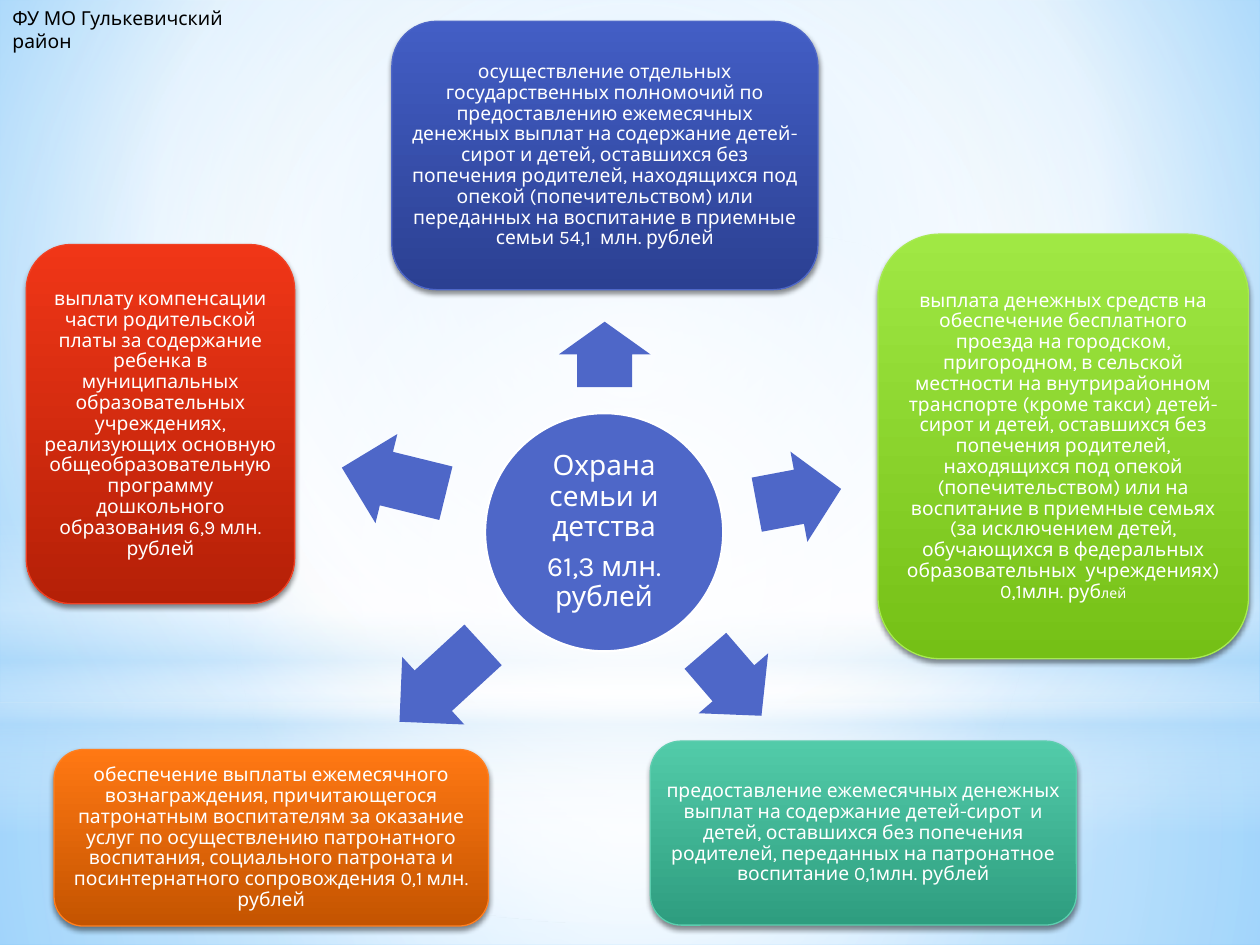
from lxml import etree
from pptx import Presentation
from pptx.dml.color import RGBColor
from pptx.enum.shapes import MSO_SHAPE
from pptx.enum.text import MSO_ANCHOR, PP_ALIGN
from pptx.oxml.ns import qn
from pptx.util import Cm, Pt

RECT, OVAL = MSO_SHAPE.RECTANGLE, MSO_SHAPE.OVAL
CARD, ARROW = MSO_SHAPE.ROUNDED_RECTANGLE, MSO_SHAPE.RIGHT_ARROW
CENTER, MIDDLE = PP_ALIGN.CENTER, MSO_ANCHOR.MIDDLE

WHITE = RGBColor(0xFF, 0xFF, 0xFF)
BLACK = RGBColor(0, 0, 0)
BLUE = RGBColor(0x4E, 0x67, 0xC8)
BLUE_TOP, BLUE_END = RGBColor(0x43, 0x5E, 0xC5), RGBColor(0x2B, 0x40, 0x92)
LIME = RGBColor(0xA7, 0xEA, 0x52)
LIME_TOP, LIME_END = RGBColor(0xA0, 0xE8, 0x44), RGBColor(0x75, 0xC0, 0x16)
TEAL = RGBColor(0x5D, 0xCE, 0xAF)
TEAL_TOP, TEAL_END = RGBColor(0x52, 0xCB, 0xA9), RGBColor(0x2E, 0x9D, 0x7F)
ORANGE = RGBColor(0xFF, 0x80, 0x21)
ORANGE_TOP, ORANGE_END = RGBColor(0xFF, 0x78, 0x13), RGBColor(0xC4, 0x54, 0x00)
RED = RGBColor(0xF1, 0x41, 0x24)
RED_TOP, RED_END = RGBColor(0xF0, 0x36, 0x17), RGBColor(0xB5, 0x20, 0x07)
SKY = RGBColor(0xB4, 0xDC, 0xFA)
SKY_IN, SKY_OUT = RGBColor(0x9E, 0xD5, 0xFF), RGBColor(0x5B, 0xB9, 0xFF)
MID = (50, 50, 50, 50)


def add(parent, tag, **attrs):
    return etree.SubElement(parent, qn(tag), {k: str(v) for k, v in attrs.items()})


def add_color(parent, color, alpha):
    clr = add(parent, "a:srgbClr", val=color)
    if alpha < 100:
        add(clr, "a:alpha", val=alpha * 1000)


def set_gradient(fill, holder, stops, focus=None):
    """Stops are (percent, colour, opacity); with no focus it runs downwards."""
    fill.gradient()
    grad = next(holder.iter(qn("a:gradFill")))
    for child in list(grad):
        grad.remove(child)
    gs_lst = add(grad, "a:gsLst")
    for pos, color, alpha in stops:
        add_color(add(gs_lst, "a:gs", pos=pos * 1000), color, alpha)
    if focus:
        sides = {k: v * 1000 for k, v in zip("ltrb", focus)}
        add(add(grad, "a:path", path="circle"), "a:fillToRect", **sides)
    else:
        add(grad, "a:lin", ang=90 * 60000, scaled=0)


def add_text(p, text, size=11, color=WHITE, font="Karla"):
    r = p.add_run()
    r.text = text
    r.font.size, r.font.name, r.font.color.rgb = Pt(size), font, color


class Deck:
    def __init__(self):
        self.prs = Presentation()
        self.prs.slide_width, self.prs.slide_height = Cm(25.4), Cm(19.05)
        self.s = self.prs.slides.add_slide(self.prs.slide_layouts[6])

    def shape(self, kind, box, fill=None, line=None, width=0.75):
        sp = self.s.shapes.add_shape(kind, *map(Cm, box))
        sp.shadow.inherit = False
        if fill is not None:
            sp.fill.solid()
            sp.fill.fore_color.rgb = fill
        if line is None:
            sp.line.fill.background()
        else:
            sp.line.color.rgb, sp.line.width = line, Pt(width)
        return sp

    def glow(self, kind, box, stops, focus=None):
        sp = self.shape(kind, box)
        set_gradient(sp.fill, sp._element.spPr, stops, focus)

    def label(self, sp, paragraphs):
        """Each paragraph is a list of (text, size) runs."""
        tf = sp.text_frame
        tf.word_wrap, tf.vertical_anchor = True, MIDDLE
        tf.margin_left = tf.margin_right = tf.margin_top = tf.margin_bottom = Cm(0.05)
        for i, runs in enumerate(paragraphs):
            p = tf.add_paragraph() if i else tf.paragraphs[0]
            p.alignment, p.line_spacing = CENTER, 0.9
            p.space_after = Pt(runs[0][1] * 0.35)
            for text, size in runs:
                add_text(p, text, size=size)

    def card(self, box, top, end, line, runs):
        sp = self.shape(CARD, box, line=line)
        spPr = sp._element.spPr
        set_gradient(sp.fill, spPr, [(0, top, 100), (100, end, 100)])
        shadow = add(spPr.find(qn("a:effectLst")), "a:outerShdw", blurRad=Pt(3.1),
                     dist=Pt(1.8), dir=90 * 60000, rotWithShape=0)
        add_color(shadow, BLACK, 45)
        self.label(sp, [runs])

    def arrow(self, left, top, width, angle):
        sp = self.shape(ARROW, (left, top, width, 1.85), fill=BLUE)
        sp.adjustments[0], sp.adjustments[1] = 0.6, 0.5
        sp.rotation = angle

    def note(self, box, text):
        tf = self.s.shapes.add_textbox(*map(Cm, box)).text_frame
        tf.word_wrap = True
        add_text(tf.paragraphs[0], text, color=BLACK)


# Card box, gradient, outline, text runs, arrow (left, top, width, angle)
CARDS = [
    ((7.9, 0.43, 8.59, 5.41), BLUE_TOP, BLUE_END, BLUE,
     [("осуществление отдельных государственных полномочий по предоставлению "
       "ежемесячных денежных выплат на содержание детей-сирот и детей, оставшихся "
       "без попечения родителей, находящихся под опекой (попечительством) или "
       "переданных на воспитание в приемные семьи 54,1  млн. рублей", 11)],
     (11.53, 6.22, 1.32, 270)),
    ((17.7, 4.72, 7.47, 8.56), LIME_TOP, LIME_END, LIME,
     [("выплата денежных средств на обеспечение бесплатного проезда на городском, "
       "пригородном, в сельской местности на внутрирайонном транспорте (кроме такси) "
       "детей-сирот и детей, оставшихся без попечения родителей, находящихся под "
       "опекой (попечительством) или на воспитание в приемные семьях (за исключением "
       "детей, обучающихся в федеральных образовательных  учреждениях) "
       "0,1млн. руб", 11), ("лей", 8)],
     (15.24, 9.09, 1.73, 349.4)),
    ((13.11, 14.94, 8.59, 3.71), TEAL_TOP, TEAL_END, TEAL,
     [("предоставление ежемесячных денежных выплат на содержание детей-сирот  и "
       "детей, оставшихся без попечения родителей, переданных на патронатное "
       "воспитание 0,1млн. рублей", 11)],
     (13.92, 12.85, 1.73, 49.2)),
    ((1.09, 15.11, 8.76, 3.56), ORANGE_TOP, ORANGE_END, ORANGE,
     [("обеспечение выплаты ежемесячного вознаграждения, причитающегося патронатным "
       "воспитателям за оказание услуг по осуществлению патронатного воспитания, "
       "социального патроната и посинтернатного сопровождения 0,1 млн. рублей", 11)],
     (7.75, 12.85, 2.29, 137.4)),
    ((0.53, 4.93, 5.41, 7.24), RED_TOP, RED_END, RED,
     [("выплату компенсации части родительской платы за содержание ребенка в "
       "муниципальных образовательных учреждениях, реализующих основную "
       "общеобразовательную программу дошкольного образования 6,9 млн. рублей", 11)],
     (6.86, 8.76, 2.16, 193.8)),
]


def main():
    deck = Deck()

    # Background and soft light layers
    bg = deck.s.background
    set_gradient(bg.fill, deck.s._element,
                 [(0, SKY_IN, 100), (60, WHITE, 100), (100, SKY_OUT, 100)],
                 (20, 10, 20, 60))
    deck.glow(RECT, (0, 14.17, 25.4, 4.88),
              [(0, WHITE, 91), (37, WHITE, 76), (100, SKY, 79)], MID)
    deck.glow(RECT, (0, 0, 25.4, 14.17),
              [(0, WHITE, 89), (48, WHITE, 62), (100, SKY, 79)], MID)
    deck.glow(RECT, (0, 10.46, 25.4, 6.35),
              [(0, WHITE, 0), (29, WHITE, 30), (45, SKY, 40),
               (55, WHITE, 26), (65, SKY, 60), (100, WHITE, 0)])
    deck.glow(OVAL, (0, 4.45, 25.4, 14.17), [(0, WHITE, 100), (56, WHITE, 0)], MID)

    # Hub
    hub = deck.shape(OVAL, (9.78, 8.33, 4.8, 4.8), fill=BLUE, line=WHITE, width=1.25)
    deck.label(hub, [[("Охрана семьи и детства", 16)], [("61,3 млн. рублей", 16)]])

    # Arrows and cards around the hub
    for box, top, end, line, runs, arrow in CARDS:
        deck.arrow(*arrow)
        deck.card(box, top, end, line, runs)

    # Department name
    deck.note((0, 0, 6, 0.74), "ФУ МО Гулькевичский район")

    deck.prs.save("out.pptx")


if __name__ == "__main__":
    main()
